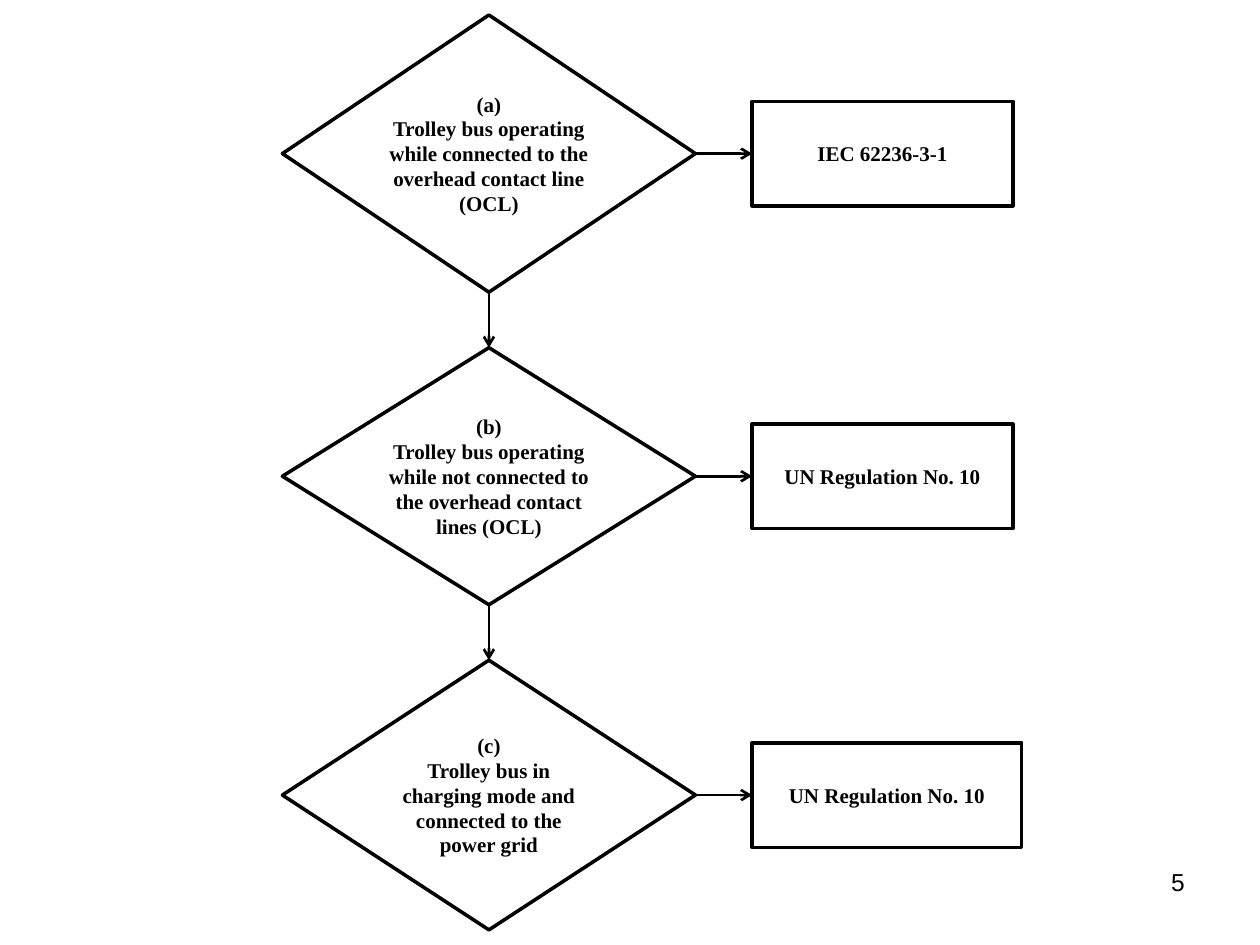
from dataclasses import dataclass

from lxml import etree
from pptx import Presentation
from pptx import util as u
from pptx.dml.color import RGBColor
from pptx.enum import shapes, text
from pptx.oxml import ns

TOP, LEFT, BOTTOM, RIGHT = range(4)


@dataclass(frozen=True)
class Theme:
    ink: RGBColor = RGBColor(0, 0, 0)
    paper: RGBColor = RGBColor(255, 255, 255)
    label_font: str = "Times New Roman"
    label_size: float = 12
    label_leading: float = 14.2
    number_font: str = "Arial"
    number_size: float = 14
    outline: float = 2
    arrow: float = 1.5


class FlowSlide:
    def __init__(self, page, theme):
        self.page = page
        self.theme = theme

    def add_span(self, para, words, font, size, bold=False):
        span = para.add_run()
        span.text = words
        span.font.name = font
        span.font.size = u.Pt(size)
        span.font.bold = bold
        span.font.color.rgb = self.theme.ink

    def add_node(self, kind, left, top, width, height, lines):
        theme = self.theme
        node = self.page.shapes.add_shape(
            kind, u.Pt(left), u.Pt(top), u.Pt(width), u.Pt(height))
        node.shadow.inherit = False
        node.fill.solid()
        node.fill.fore_color.rgb = theme.paper
        node.line.color.rgb = theme.ink
        node.line.width = u.Pt(theme.outline)
        frame = node.text_frame
        frame.word_wrap = True
        frame.vertical_anchor = text.MSO_ANCHOR.MIDDLE
        frame.margin_left = frame.margin_right = 0
        frame.margin_top = frame.margin_bottom = 0
        for index, line in enumerate(lines):
            para = frame.add_paragraph() if index else frame.paragraphs[0]
            para.alignment = text.PP_ALIGN.CENTER
            para.line_spacing = u.Pt(theme.label_leading)
            self.add_span(para, line, theme.label_font, theme.label_size, True)
        return node

    def add_arrow(self, source, source_side, target, target_side):
        arrow = self.page.shapes.add_connector(
            shapes.MSO_CONNECTOR.STRAIGHT, 0, 0, 0, 0)
        arrow.begin_connect(source, source_side)
        arrow.end_connect(target, target_side)
        arrow.line.color.rgb = self.theme.ink
        arrow.line.width = u.Pt(self.theme.arrow)
        line = arrow.line._get_or_add_ln()
        etree.SubElement(line, ns.qn("a:tailEnd"), type="arrow")
        etree.SubElement(arrow._element.spPr, ns.qn("a:effectLst"))

    def add_page_number(self, number, left, top, width, height):
        box = self.page.shapes.add_textbox(
            u.Pt(left), u.Pt(top), u.Pt(width), u.Pt(height))
        box.text_frame.word_wrap = True
        para = box.text_frame.paragraphs[0]
        para.alignment = text.PP_ALIGN.RIGHT
        self.add_span(para, number, self.theme.number_font, self.theme.number_size)


# Case label, question, decision height, standard, standard width
CASES = [
    ("(a)", "Trolley bus operating while connected to the overhead contact line (OCL)",
     158.4, "IEC 62236-3-1", 149),
    ("(b)", "Trolley bus operating while not connected to the overhead contact lines (OCL)",
     146.9, "UN Regulation No. 10", 149),
    ("(c)", "Trolley bus in charging mode and connected to the power grid",
     154.1, "UN Regulation No. 10", 154),
]
DECISION_LEFT, DECISION_WIDTH = 161.4, 236
FIRST_TOP, DECISION_GAP = 8.6, 31.7
STANDARD_LEFT, STANDARD_HEIGHT = 429.8, 59.8


def main():
    deck = Presentation()
    deck.slide_width, deck.slide_height = u.Pt(720), u.Pt(540)
    flow = FlowSlide(deck.slides.add_slide(deck.slide_layouts[6]), Theme())
    flow.add_page_number("5", 516, 492, 168, 37.5)

    top = FIRST_TOP
    previous = None
    for label, question, height, standard, width in CASES:
        decision = flow.add_node(
            shapes.MSO_SHAPE.FLOWCHART_DECISION,
            DECISION_LEFT, top, DECISION_WIDTH, height, [label, question])
        result = flow.add_node(
            shapes.MSO_SHAPE.RECTANGLE,
            STANDARD_LEFT, top + (height - STANDARD_HEIGHT) / 2,
            width, STANDARD_HEIGHT, [standard])
        flow.add_arrow(decision, RIGHT, result, LEFT)
        if previous is not None:
            flow.add_arrow(previous, BOTTOM, decision, TOP)
        previous = decision
        top += height + DECISION_GAP

    deck.save("out.pptx")


if __name__ == "__main__":
    main()
